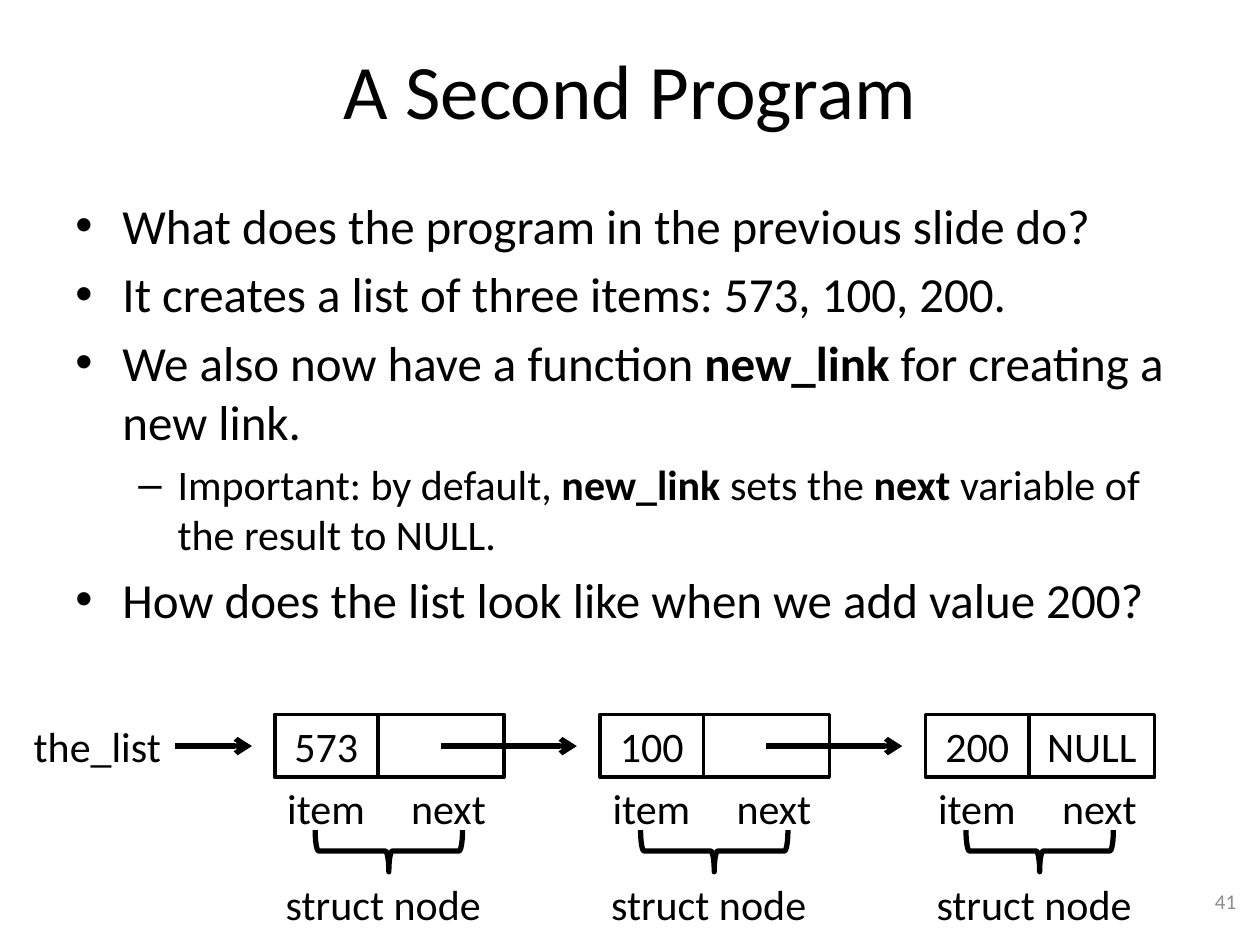
from dataclasses import dataclass

from lxml import etree
from pptx import Presentation
from pptx import util as u
from pptx.dml.color import RGBColor
from pptx.enum import shapes, text
from pptx.oxml.ns import qn

COLORS = {"ink": "000000", "number": "8C8C8C"}
FONT = "Calibri"

# Linked-list geometry in centimetres
NODE_LEFT, NODE_PITCH, NODE_TOP = 5.54, 6.56, 14.4
ITEM_W, NEXT_W, ROW_H = 2.08, 2.54, 1.27
ARROW_Y = 15.04
LABEL_TOP, STRUCT_TOP = 15.65, 17.58


@dataclass
class Node:
    item: str
    next: str = ""


@dataclass
class Bullet:
    runs: list[tuple[str, bool]]
    level: int = 0


@dataclass
class BulletStyle:
    mark: str
    size: int
    left: float
    hang: float


NODES = [Node("573"), Node("100"), Node("200", "NULL")]
STYLES = [BulletStyle("•", 28, 0.95, 0.95), BulletStyle("–", 24, 2.06, 0.79)]
BULLETS = [
    Bullet([("What does the program in the previous slide do?", False)]),
    Bullet([("It creates a list of three items: 573, 100, 200.", False)]),
    Bullet([("We also now have a function ", False), ("new_link", True),
            (" for creating a new link.", False)]),
    Bullet([("Important: by default, ", False), ("new_link ", True),
            ("sets the ", False), ("next", True),
            (" variable of the result to NULL.", False)], level=1),
    Bullet([("How does the list look like when we add value 200?", False)]),
]


def rgb(name: str) -> RGBColor:
    return RGBColor.from_string(COLORS[name])


def cm(*lengths: float) -> list[u.Length]:
    return [u.Cm(v) for v in lengths]


def add_run(p, words: str, size: float, color: str = "ink", bold: bool = False) -> None:
    r = p.add_run()
    r.text = words
    for key, value in {"name": FONT, "size": u.Pt(size), "bold": bold}.items():
        setattr(r.font, key, value)
    r.font.color.rgb = rgb(color)


def add_text(s, words: str, box: tuple, size: float = 24, color: str = "ink",
             align=text.PP_ALIGN.LEFT, anchor=text.MSO_ANCHOR.TOP, wrap: bool = False) -> None:
    tf = s.shapes.add_textbox(*cm(*box)).text_frame
    for key, value in {"word_wrap": wrap, "vertical_anchor": anchor}.items():
        setattr(tf, key, value)
    p = tf.paragraphs[0]
    p.alignment = align
    add_run(p, words, size, color)


def add_bullets(s, bullets: list[Bullet], box: tuple) -> None:
    tf = s.shapes.add_textbox(*cm(*box)).text_frame
    tf.word_wrap = True
    for i, bullet in enumerate(bullets):
        style = STYLES[bullet.level]
        p = tf.add_paragraph() if i else tf.paragraphs[0]
        p.level = bullet.level
        p.space_before = u.Pt(style.size * 0.2)
        pPr = p._p.get_or_add_pPr()
        pPr.set("marL", str(u.Cm(style.left)))
        pPr.set("indent", str(-u.Cm(style.hang)))
        etree.SubElement(pPr, qn("a:buFont"), typeface="Arial")
        etree.SubElement(pPr, qn("a:buChar"), char=style.mark)
        for words, bold in bullet.runs:
            add_run(p, words, style.size, bold=bold)


def add_outline(s, kind, box: tuple, width: float):
    """Add an unfilled preset shape with a black line."""
    sp = s.shapes.add_shape(kind, *cm(*box))
    sp.shadow.inherit = False
    sp.fill.background()
    sp.line.color.rgb = rgb("ink")
    sp.line.width = u.Pt(width)
    return sp


def add_cell(s, words: str, left: float, width: float) -> None:
    sp = add_outline(s, shapes.MSO_SHAPE.RECTANGLE, (left, NODE_TOP, width, ROW_H), 2)
    if words:
        p = sp.text_frame.paragraphs[0]
        p.alignment = text.PP_ALIGN.CENTER
        add_run(p, words, 24)


def add_arrow(s, start: float, end: float) -> None:
    c = s.shapes.add_connector(shapes.MSO_CONNECTOR.STRAIGHT,
                               *cm(start, ARROW_Y, end, ARROW_Y))
    c.line.color.rgb = rgb("ink")
    c.line.width = u.Pt(3)
    etree.SubElement(c.line._get_or_add_ln(), qn("a:tailEnd"), type="arrow")
    etree.SubElement(c._element.spPr, qn("a:effectLst"))


def add_node(s, node: Node, left: float) -> None:
    add_cell(s, node.item, left, ITEM_W)
    add_cell(s, node.next, left + ITEM_W, NEXT_W)
    add_text(s, "item", (left, LABEL_TOP, ITEM_W, ROW_H))
    add_text(s, "next", (left + 2.5, LABEL_TOP, 2.03, ROW_H))
    brace = add_outline(s, shapes.MSO_SHAPE.LEFT_BRACE, (left + 1.88, 15.67, 0.84, 2.97), 3)
    brace.rotation = 270
    add_text(s, "struct node", (left - 0.03, STRUCT_TOP, 4.5, ROW_H))


def main() -> None:
    prs = Presentation()
    prs.slide_width, prs.slide_height = cm(25.4, 19.05)
    s = prs.slides.add_slide(prs.slide_layouts[6])

    middle = text.MSO_ANCHOR.MIDDLE
    add_text(s, "A Second Program", (1.27, 0.2, 22.86, 3.18), size=44,
             align=text.PP_ALIGN.CENTER, anchor=middle, wrap=True)
    add_bullets(s, BULLETS, (1.27, 3.81, 22.86, 13.97))
    add_text(s, "41", (19.25, 17.65, 5.92, 1.02), size=12, color="number",
             align=text.PP_ALIGN.RIGHT, anchor=middle, wrap=True)

    add_text(s, "the_list", (0.43, NODE_TOP, 3.1, ROW_H))
    add_arrow(s, 3.53, 5.08)
    for i, node in enumerate(NODES):
        left = NODE_LEFT + i * NODE_PITCH
        add_node(s, node, left)
        if not node.next:
            add_arrow(s, left + 3.35, left + 6.09)

    prs.save("out.pptx")


if __name__ == "__main__":
    main()
